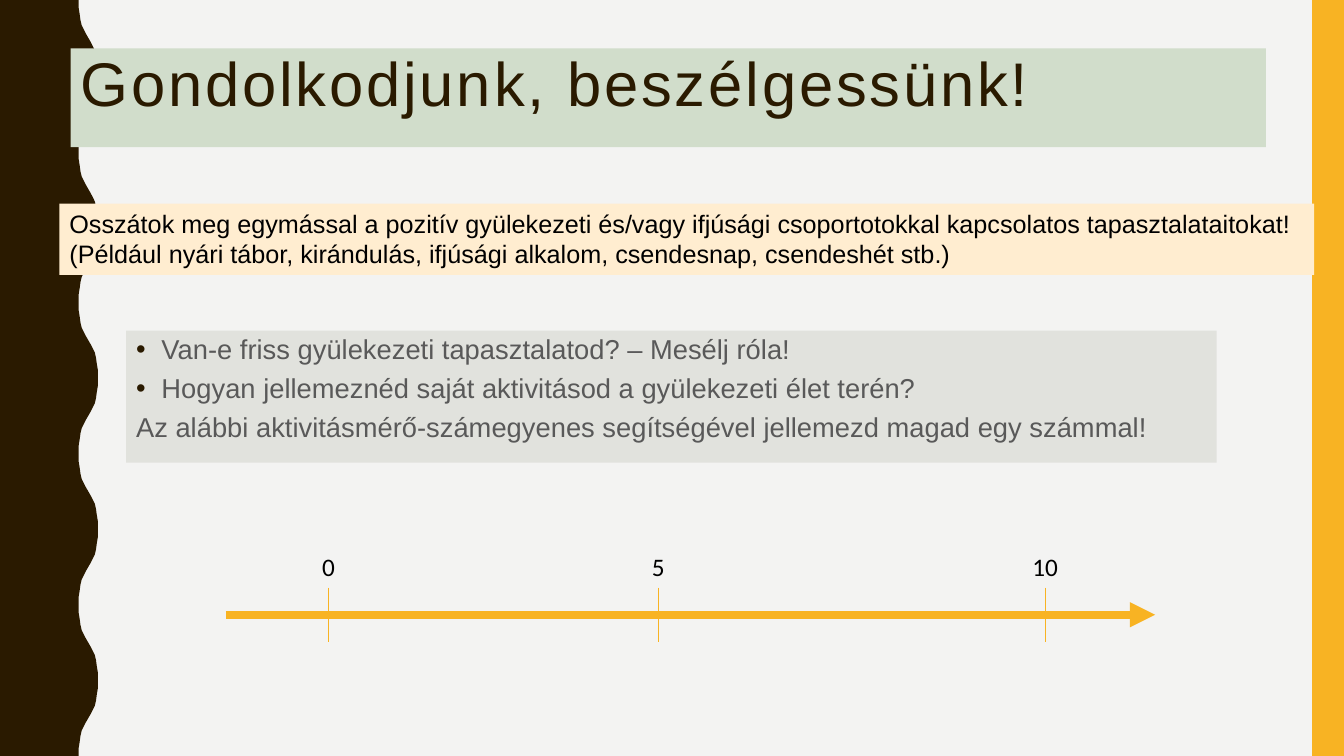
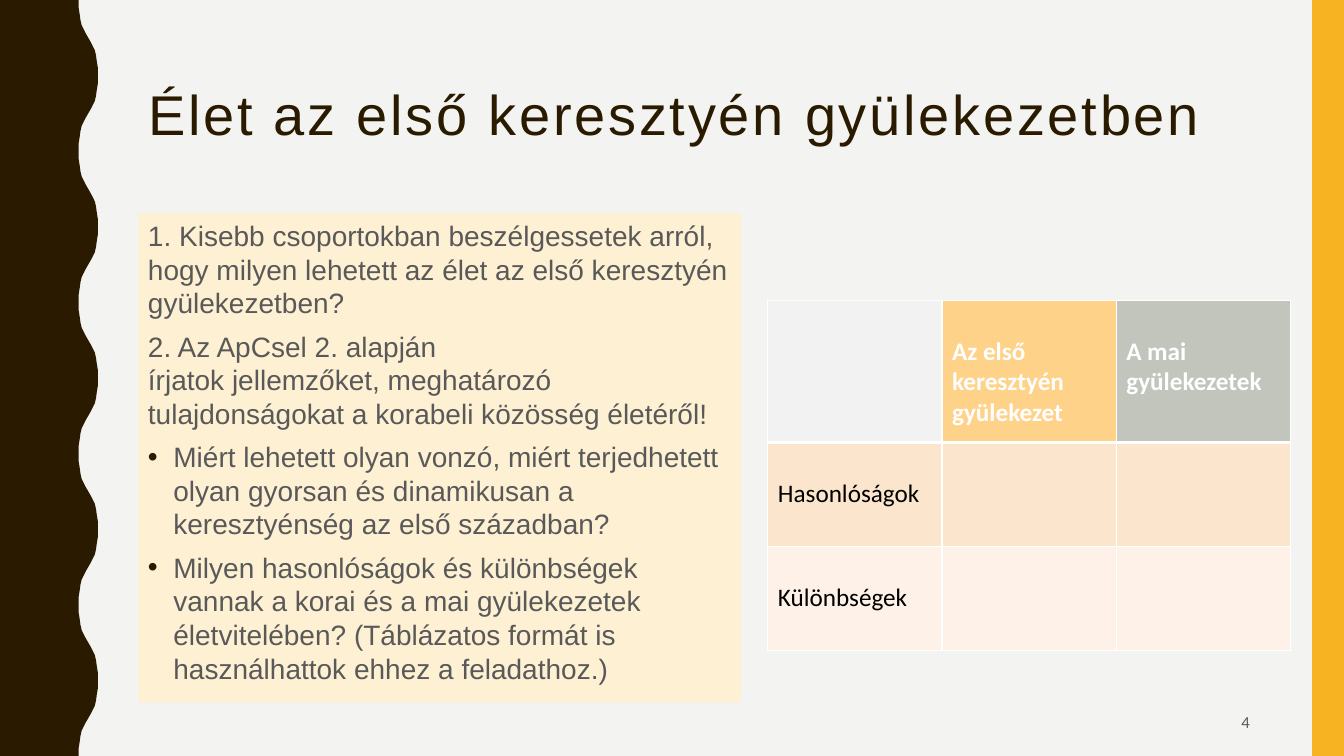
from lxml.etree import SubElement
from pptx import Presentation
from pptx.dml.color import RGBColor
from pptx.enum.shapes import MSO_CONNECTOR as LINK, MSO_SHAPE as SHAPE
from pptx.enum.text import MSO_ANCHOR as ANCHOR, MSO_AUTO_SIZE as FIT, PP_ALIGN as ALIGN
from pptx.oxml.ns import qn
from pptx.util import Cm, Pt

PAPER = RGBColor(0xF3, 0xF3, 0xF2)
BROWN = RGBColor(0x2A, 0x1A, 0x00)
GOLD = RGBColor(0xF8, 0xB3, 0x23)
SAGE = RGBColor(0xD1, 0xDD, 0xCB)
STONE = RGBColor(0xE1, 0xE2, 0xDD)
PEACH = RGBColor(0xFF, 0xED, 0xD0)
CREAM = RGBColor(0xFE, 0xF0, 0xD3)
GREY = RGBColor(0x59, 0x59, 0x59)
BLACK = RGBColor(0, 0, 0)
WHITE = RGBColor(0xFF, 0xFF, 0xFF)
SILVER = RGBColor(0xF2, 0xF2, 0xF2)
AMBER = RGBColor(0xFF, 0xD2, 0x8A)
ASH = RGBColor(0xC2, 0xC5, 0xBB)
APRICOT = RGBColor(0xFC, 0xE5, 0xCD)
SHELL = RGBColor(0xFE, 0xF2, 0xE8)

WIDE, HIGH = 33.87, 19.05
HALVES = 10
WAVE_X, WAVE_W = 1.98, 0.49
CURVE = [(0, 0), (0, 0.18), (0.03, 0.36), (0.05, 0.51),
         (0.08, 0.64), (0.13, 0.74), (0.18, 0.84)]


def style(para, size, color, font="Arial", bold=False):
    for run in para.runs:
        face = run.font
        face.name, face.size, face.bold = font, Pt(size), bold
        face.color.rgb = color


def paint(shape, color):
    shape.fill.solid()
    shape.fill.fore_color.rgb = color


def plain(shape, color):
    """Fill a shape and take away its outline and shadow."""
    paint(shape, color)
    shape.line.fill.background()
    shape.shadow.inherit = False
    return shape


def wave(slide):
    """Draw the left band; each half wave mirrors the one before."""
    step = HIGH / HALVES
    half = CURVE + [(WAVE_W - x, step - y) for x, y in reversed(CURVE[1:])]
    edge = [(WAVE_X + (WAVE_W - x if k % 2 else x), k * step + y)
            for k in range(HALVES) for x, y in half]
    edge += [(WAVE_X, HIGH), (0, HIGH)]
    path = slide.shapes.build_freeform(0, 0)
    path.add_line_segments([(Cm(x), Cm(y)) for x, y in edge], close=True)
    return plain(path.convert_to_shape(), BROWN)


def start(deck, text, box, size, color=None):
    """Add a slide with its side bands and title."""
    slide = deck.slides.add_slide(deck.slide_layouts[5])
    strip = slide.shapes.add_shape(
        SHAPE.RECTANGLE, Cm(33.07), 0, Cm(0.8), Cm(HIGH))
    for band in (plain(strip, GOLD), wave(slide)):
        slide.shapes.element.insert(2, band.element)
    title = slide.shapes.title
    title.left, title.top, title.width, title.height = map(Cm, box)
    if color is not None:
        paint(title, color)
    frame = title.text_frame
    frame.text = text
    frame.auto_size = FIT.NONE
    frame.vertical_anchor = ANCHOR.TOP
    para = frame.paragraphs[0]
    para.alignment = ALIGN.LEFT
    para.line_spacing = 0.9
    style(para, size, BROWN)
    for run in para.runs:
        run.font.element.set("spc", "200") if hasattr(run.font, "element") \
            else run._r.get_or_add_rPr().set("spc", "200")
    return slide


def panel(slide, box, lines, size, ink, color=None, font="Arial",
          align=ALIGN.LEFT, wrap=True):
    """Add a text box with one paragraph for each line."""
    shape = slide.shapes.add_textbox(*map(Cm, box))
    if color is not None:
        paint(shape, color)
    frame = shape.text_frame
    frame.word_wrap = wrap
    for i, line in enumerate(lines):
        para = frame.add_paragraph() if i else frame.paragraphs[0]
        para.text = line
        para.alignment = align
        style(para, size, ink, font)
    return frame


def bullet(para):
    props = para._p.get_or_add_pPr()
    props.set("marL", str(Cm(0.64)))
    props.set("indent", str(-Cm(0.64)))
    tint = SubElement(props, qn("a:buClr"))
    SubElement(tint, qn("a:srgbClr")).set("val", str(BROWN))
    SubElement(props, qn("a:buFont")).set("typeface", "Arial")
    SubElement(props, qn("a:buChar")).set("char", "•")


def body(slide, box, lines, size, color, marked, space=1.0):
    """Add a text panel; marked holds the numbers of the bulleted lines."""
    frame = panel(slide, box, lines, size, GREY, color)
    for i, para in enumerate(frame.paragraphs):
        para.space_before = Pt(7)
        para.line_spacing = space
        if i in marked:
            bullet(para)


def rule(slide, x1, y1, x2, y2, width, arrow=False):
    line = slide.shapes.add_connector(
        LINK.STRAIGHT, Cm(x1), Cm(y1), Cm(x2), Cm(y2))
    line.line.color.rgb = GOLD
    line.line.width = Pt(width)
    props = line.element.spPr
    if arrow:
        SubElement(props.find(qn("a:ln")), qn("a:tailEnd")).set("type", "triangle")
    SubElement(props, qn("a:effectLst"))


def scale(slide):
    """Draw the number line with its ticks and labels."""
    mid = 15.49
    rule(slide, 5.69, mid, 29.11, mid, 6, arrow=True)
    for label, x in (("0", 8.28), ("5", 16.59), ("10", 26.34)):
        rule(slide, x, mid - 0.68, x, mid + 0.68, 0.5)
        panel(slide, (x - 0.6, 13.77, 1.2, 1.02), [label], 18, BLACK,
              font="Calibri", align=ALIGN.CENTER, wrap=False)


def border(cell, low):
    """Give a cell white edges; low is the width of the bottom one."""
    props = cell._tc.get_or_add_tcPr()
    for i, (side, width) in enumerate(
            (("L", 1), ("R", 1), ("T", 1), ("B", low))):
        line = props.makeelement(qn("a:ln" + side), {"w": str(Pt(width))})
        props.insert(i, line)
        fill = SubElement(line, qn("a:solidFill"))
        SubElement(fill, qn("a:srgbClr")).set("val", str(WHITE))


def grid(slide, left, top, width, rows):
    """Add a table; each row is its height, texts and fills."""
    size = len(rows[0][1])
    height = sum(row[0] for row in rows)
    table = slide.shapes.add_table(
        len(rows), size, Cm(left), Cm(top), Cm(width * size), Cm(height)).table
    table.first_row = table.horz_banding = False
    for col in table.columns:
        col.width = Cm(width)
    for r, (tall, texts, fills) in enumerate(rows):
        table.rows[r].height = Cm(tall)
        head = r == 0
        for c, (text, color) in enumerate(zip(texts, fills)):
            cell = table.cell(r, c)
            cell.text = text
            cell.margin_top = Cm(0.9)
            paint(cell, color)
            border(cell, 3 if head else 1)
            style(cell.text_frame.paragraphs[0], 18,
                  WHITE if head else BLACK, "Calibri", head)


def talk(deck):
    slide = start(deck, "Gondolkodjunk, beszélgessünk!",
                  (1.78, 1.22, 30.12, 2.49), 44, SAGE)
    body(slide, (3.18, 8.33, 27.48, 3.33), [
        "Van-e friss gyülekezeti tapasztalatod? – Mesélj róla!",
        "Hogyan jellemeznéd saját aktivitásod a gyülekezeti élet terén?",
        "Az alábbi aktivitásmérő-számegyenes segítségével jellemezd magad "
        "egy számmal!",
    ], 19.5, STONE, (0, 1), 0.9)
    panel(slide, (1.5, 5.13, 31.62, 1.8), [
        "Osszátok meg egymással a pozitív gyülekezeti és/vagy ifjúsági "
        "csoportotokkal kapcsolatos tapasztalataitokat!",
        "(Például nyári tábor, kirándulás, ifjúsági alkalom, csendesnap, "
        "csendeshét stb.)",
    ], 18, BLACK, PEACH)
    scale(slide)


def life(deck):
    slide = start(deck, "Élet az első keresztyén gyülekezetben",
                  (3.48, 2.08, 28.27, 2.36), 40)
    body(slide, (3.48, 5.38, 15.19, 12.32), [
        "1. Kisebb csoportokban beszélgessetek arról, hogy milyen lehetett "
        "az élet az első keresztyén gyülekezetben?",
        "2. Az ApCsel 2. alapján\nírjatok jellemzőket, meghatározó "
        "tulajdonságokat a korabeli közösség életéről!",
        "Miért lehetett olyan vonzó, miért terjedhetett olyan gyorsan és "
        "dinamikusan a keresztyénség az első században?",
        "Milyen hasonlóságok és különbségek vannak a korai és a mai "
        "gyülekezetek életvitelében? (Táblázatos formát is használhattok "
        "ehhez a feladathoz.)",
    ], 20, CREAM, (2, 3))
    page = panel(slide, (23.93, 17.7, 7.82, 0.97), ["4"], 12, GREY,
                 font="Calibri", align=ALIGN.RIGHT)
    page.vertical_anchor = ANCHOR.MIDDLE
    grid(slide, 19.35, 7.57, 4.39, [
        (3.58, ("", "Az első keresztyén gyülekezet", "A mai gyülekezetek"),
         (SILVER, AMBER, ASH)),
        (2.62, ("Hasonlóságok", "", ""), (APRICOT,) * 3),
        (2.62, ("Különbségek", "", ""), (SHELL,) * 3),
    ])


def main():
    deck = Presentation()
    deck.slide_width, deck.slide_height = Cm(WIDE), Cm(HIGH)
    paint(deck.slide_master.background, PAPER)
    talk(deck)
    life(deck)
    deck.save("out.pptx")


if __name__ == "__main__":
    main()
